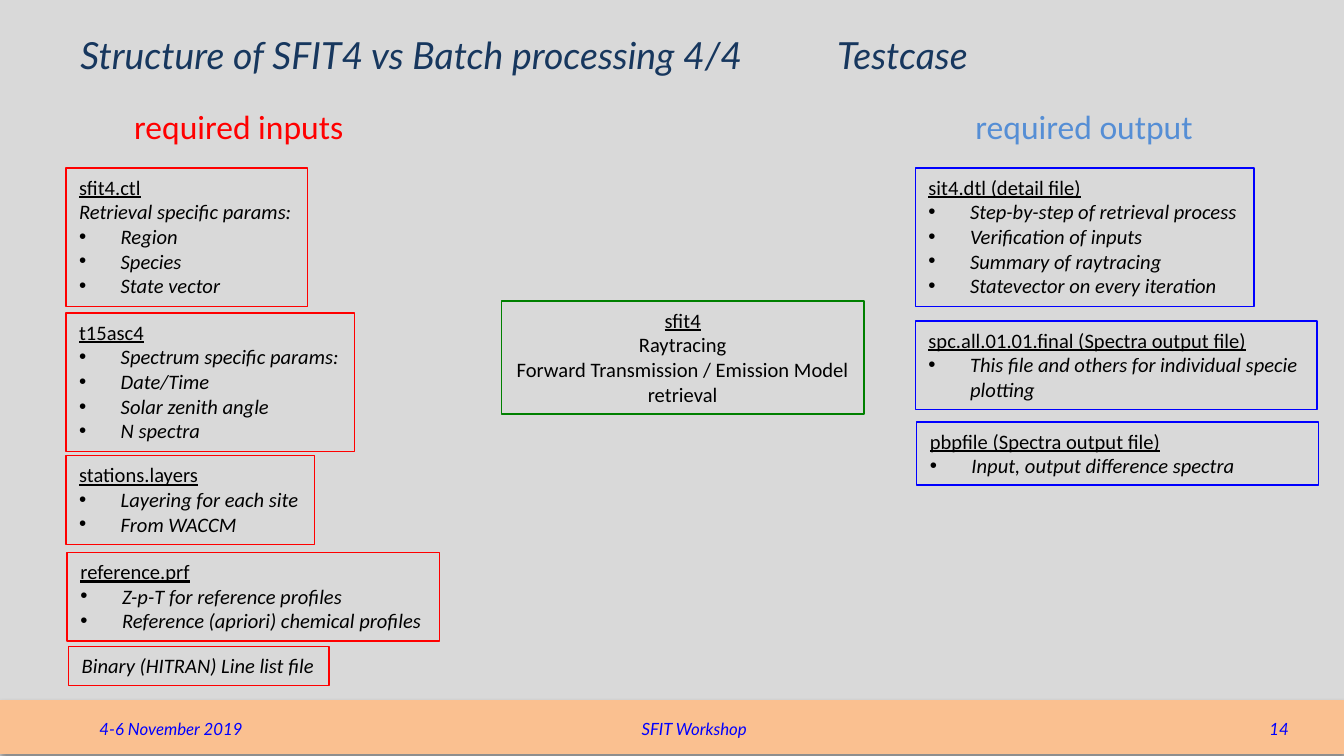
from lxml import etree
from pptx import Presentation
from pptx.dml.color import RGBColor
from pptx.enum import shapes, text
from pptx.oxml import ns
from pptx.util import Inches, Pt

GREY = RGBColor(0xD9, 0xD9, 0xD9)
PEACH = RGBColor(0xFA, 0xC0, 0x90)
NAVY = RGBColor(0x17, 0x37, 0x5E)
SKY = RGBColor(0x55, 0x8E, 0xD5)
RED = RGBColor(0xFF, 0, 0)
GREEN = RGBColor(0, 0x80, 0)
BLUE = RGBColor(0, 0, 0xFF)
BLACK = RGBColor(0, 0, 0)

LEFT, CENTER, RIGHT = text.PP_ALIGN.LEFT, text.PP_ALIGN.CENTER, text.PP_ALIGN.RIGHT

TITLE = "Structure of SFIT4 vs Batch processing 4/4\t\tTestcase"
TITLE_TABS = (5.25, 5.63)
HEADINGS = [
    ("required inputs", 0.9, 1.78, RED),
    ("required output", 7.16, 1.84, SKY),
]
FOOTERS = [
    ("4-6 November 2019", 0.67, 2.33, LEFT),
    ("SFIT Workshop", 3.58, 3.17, CENTER),
    ("14", 7.33, 2.33, RIGHT),
]
BOXES = [
    ((3.73, 2.24, 2.7, 0.84), GREEN, False, [
        ("name", "sfit4"), ("step", "Raytracing"),
        ("step", "Forward Transmission / Emission Model"), ("step", "retrieval")]),
    ((0.49, 1.25, 1.8, 1.03), RED, False, [
        ("name", "sfit4.ctl"), ("note", "Retrieval specific params:"),
        ("item", "Region"), ("item", "Species"), ("item", "State vector")]),
    ((0.49, 2.33, 2.15, 1.03), RED, False, [
        ("name", "t15asc4"), ("item", "Spectrum specific params:"),
        ("item", "Date/Time"), ("item", "Solar zenith angle"), ("item", "N spectra")]),
    ((0.49, 3.39, 1.85, 0.66), RED, False, [
        ("name", "stations.layers"), ("item", "Layering for each site"),
        ("item", "From WACCM")]),
    ((0.5, 4.11, 2.77, 0.66), RED, False, [
        ("name", "reference.prf"), ("item", "Z-p-T for reference profiles"),
        ("item", "Reference (apriori) chemical profiles")]),
    ((0.51, 4.81, 1.94, 0.29), RED, False, [
        ("note", "Binary (HITRAN) Line list file")]),
    ((6.81, 1.25, 2.52, 1.03), BLUE, False, [
        ("name", "sit4.dtl (detail file)"), ("item", "Step-by-step of retrieval process"),
        ("item", "Verification of inputs"), ("item", "Summary of raytracing"),
        ("item", "Statevector on every iteration")]),
    ((6.81, 2.39, 2.99, 0.66), BLUE, True, [
        ("name", "spc.all.01.01.final (Spectra output file)"),
        ("item", "This file and others for individual specie plotting")]),
    ((6.82, 3.14, 2.99, 0.47), BLUE, True, [
        ("name", "pbpfile (Spectra output file)"),
        ("item", "Input, output difference spectra")]),
]
STYLES = {
    "name": {"underline": True},
    "step": {},
    "note": {"italic": True},
    "item": {"italic": True},
}


def add_child(parent, tag, **attrs):
    child = etree.SubElement(parent, ns.qn(tag))
    for key, value in attrs.items():
        child.set(key, str(value))
    return child


def add_box(s, at, **frame):
    sp = s.shapes.add_textbox(*map(Inches, at))
    for key, value in frame.items():
        setattr(sp.text_frame, key, value)
    return sp


def add_line(p, words, color, size, name="Calibri", align=LEFT, **font):
    p.alignment = align
    r = p.add_run()
    r.text = words
    r.font.color.rgb = color
    for key, value in dict(font, size=Pt(size), name=name).items():
        setattr(r.font, key, value)


def add_bullet(p):
    pPr = p._p.get_or_add_pPr()
    pPr.set("marL", str(Inches(0.31)))
    pPr.set("indent", str(Inches(-0.31)))
    add_child(pPr, "a:buFont", typeface="Arial")
    add_child(pPr, "a:buChar", char="•")


def add_footer(s):
    bar = s.shapes.add_shape(shapes.MSO_SHAPE.RECTANGLE, *map(Inches, (0, 5.21, 10, 0.4)))
    bar.fill.solid()
    bar.fill.fore_color.rgb = PEACH
    bar.line.fill.background()
    bar.shadow.inherit = False
    effects = bar._element.spPr.find(ns.qn("a:effectLst"))
    shadow = add_child(effects, "a:outerShdw", blurRad=Pt(3.1), dist=Pt(1.8),
                       dir=5400000, rotWithShape=0)
    add_child(add_child(shadow, "a:srgbClr", val="000000"), "a:alpha", val=35000)
    for words, x, w, align in FOOTERS:
        sp = add_box(s, (x, 5.27, w, 0.3), word_wrap=True,
                     vertical_anchor=text.MSO_ANCHOR.MIDDLE,
                     margin_left=Inches(0.07), margin_right=Inches(0.07),
                     margin_top=Inches(0.04), margin_bottom=Inches(0.04))
        add_line(sp.text_frame.paragraphs[0], words, BLUE, 9, "Lato", align, italic=True)


def add_title(s):
    sp = add_box(s, (0.5, 0.23, 9, 0.35), word_wrap=True,
                 vertical_anchor=text.MSO_ANCHOR.MIDDLE)
    p = sp.text_frame.paragraphs[0]
    tabs = add_child(p._p.get_or_add_pPr(), "a:tabLst")
    for pos in TITLE_TABS:
        add_child(tabs, "a:tab", pos=Inches(pos), algn="l")
    add_line(p, TITLE, NAVY, 20, "Lato", italic=True)


def add_file_box(s, at, color, wrap, lines):
    sp = add_box(s, at, word_wrap=wrap, auto_size=text.MSO_AUTO_SIZE.SHAPE_TO_FIT_TEXT)
    sp.line.color.rgb = color
    sp.line.width = Pt(0.75)
    tf = sp.text_frame
    align = CENTER if color == GREEN else LEFT
    for i, (style, words) in enumerate(lines):
        p = tf.add_paragraph() if i else tf.paragraphs[0]
        if style == "item":
            add_bullet(p)
        add_line(p, words, BLACK, 11, align=align, **STYLES[style])


def main():
    prs = Presentation()
    prs.slide_width = Inches(10)
    prs.slide_height = Inches(10) * 9 // 16
    s = prs.slides.add_slide(prs.slide_layouts[6])
    s.background.fill.solid()
    s.background.fill.fore_color.rgb = GREY
    add_footer(s)
    add_title(s)
    for words, x, w, color in HEADINGS:
        sp = add_box(s, (x, 0.74, w, 0.4), word_wrap=False,
                     auto_size=text.MSO_AUTO_SIZE.SHAPE_TO_FIT_TEXT)
        add_line(sp.text_frame.paragraphs[0], words, color, 18)
    for box in BOXES:
        add_file_box(s, *box)
    prs.save("out.pptx")


if __name__ == "__main__":
    main()
